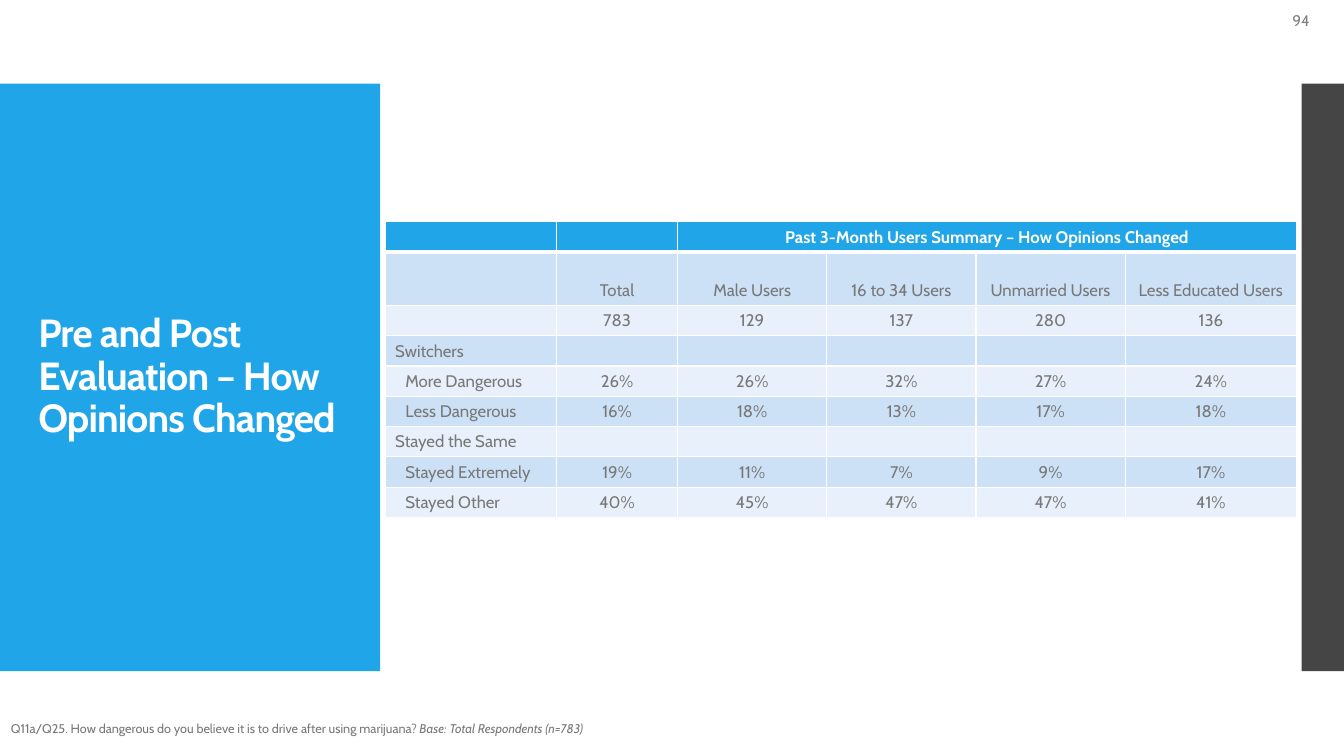
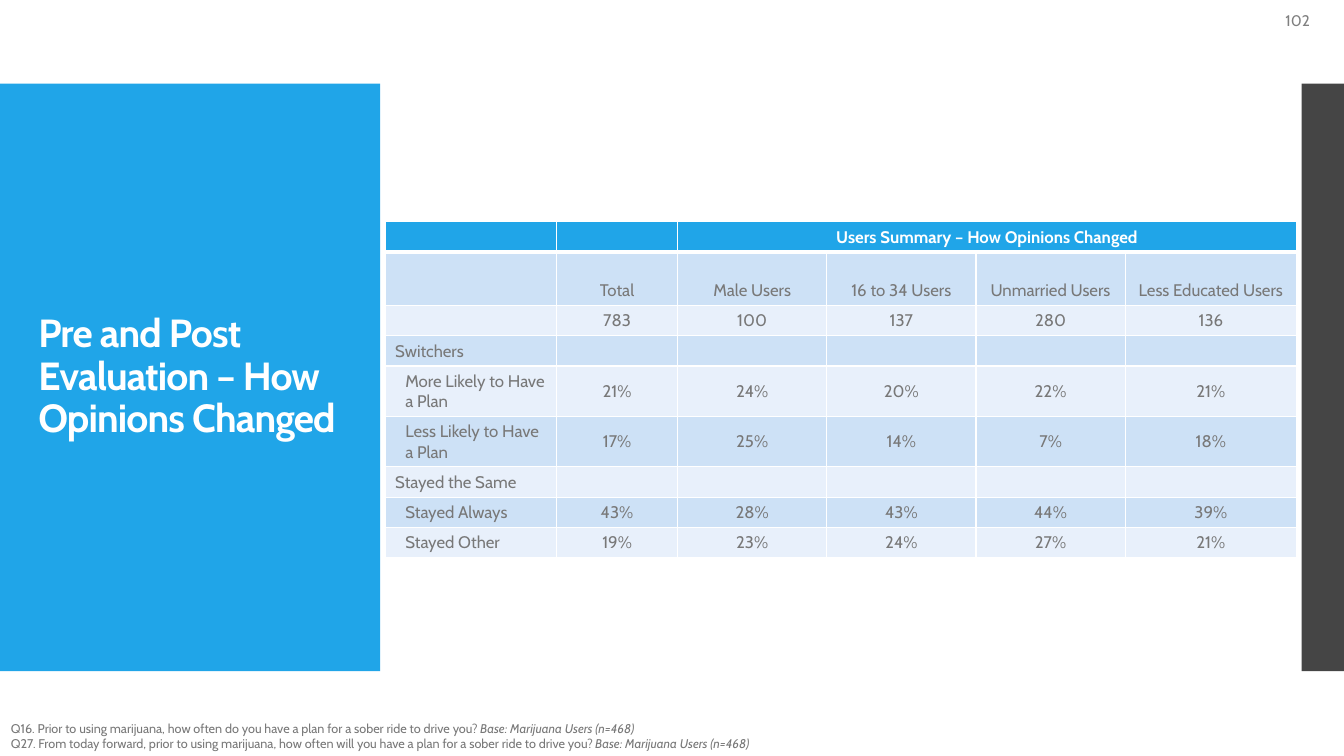
from lxml.etree import SubElement
from pptx import Presentation
from pptx.dml.color import RGBColor
from pptx.enum.shapes import MSO_SHAPE as Preset
from pptx.enum.text import MSO_ANCHOR as Anchor, MSO_AUTO_SIZE as AutoSize, PP_ALIGN as Align
from pptx.oxml.ns import qn
from pptx.util import Inches, Pt

# Content
TITLE = "Pre and Post Evaluation – How Opinions Changed"
GROUPS = ["", "Total", "Male Users", "16 to 34 Users", "Unmarried Users", "Less Educated Users"]
SECTIONS = ("Switchers", "Stayed the Same")
PAGES = [
    {
        "number": "94",
        "heading": "Past 3-Month Users Summary – How Opinions Changed",
        "rows": [
            ["", "783", "129", "137", "280", "136"],
            ["Switchers"],
            ["More Dangerous", "26%", "26%", "32%", "27%", "24%"],
            ["Less Dangerous", "16%", "18%", "13%", "17%", "18%"],
            ["Stayed the Same"],
            ["Stayed Extremely", "19%", "11%", "7%", "9%", "17%"],
            ["Stayed Other", "40%", "45%", "47%", "47%", "41%"],
        ],
        "questions": [
            ("Q11a/Q25. How dangerous do you believe it is to drive after using marijuana? ",
             "Base: Total Respondents (n=783)"),
        ],
    },
    {
        "number": "102",
        "heading": "Users Summary – How Opinions Changed",
        "rows": [
            ["", "783", "100", "137", "280", "136"],
            ["Switchers"],
            ["More Likely to Have a Plan", "21%", "24%", "20%", "22%", "21%"],
            ["Less Likely to Have a Plan", "17%", "25%", "14%", "7%", "18%"],
            ["Stayed the Same"],
            ["Stayed Always", "43%", "28%", "43%", "44%", "39%"],
            ["Stayed Other", "19%", "23%", "24%", "27%", "21%"],
        ],
        "questions": [
            ("Q16. Prior to using marijuana, how often do you have a plan for a sober ride to drive you? ",
             "Base: Marijuana Users (n=468)"),
            ("Q27. From today forward, prior to using marijuana, how often will you have a plan "
             "for a sober ride to drive you? ",
             "Base: Marijuana Users (n=468)"),
        ],
    },
]

# Shared look, lengths in inches
FONT = "Cabin"
COLORS = {"blue": "20A5E8", "charcoal": "454545", "white": "FFFFFF", "text": "787878",
          "number": "808080", "band": "CDE1F6", "pale": "E8F0FB"}
WIDTH, HEIGHT = 13.33, 7.5
BAND_TOP, BAND_HEIGHT = 0.83, 5.83
PANEL_WIDTH, EDGE_WIDTH = 3.77, 0.42
TITLE_BOX = (0.28, 1.23, 3.22, 5.03)
NUMBER_BOX = (12.49, 0.04, 0.6, 0.33)
TABLE_LEFT, TABLE_TOP = 3.82, 2.2
COLUMNS = [1.7, 1.2, 1.48, 1.48, 1.48, 1.7]
HEADING_ROW, GROUP_ROW, LINE_ROW, WRAPPED_ROW = 0.3, 0.53, 0.3, 0.5
LABEL_LIMIT = 20  # longer labels take two lines
INDENT = 0.1


def color(name):
    return RGBColor.from_string(COLORS[name])


def inches(box):
    return [Inches(length) for length in box]


def add_run(paragraph, text, size, tint, bold=False, italic=False):
    run = paragraph.add_run()
    run.text = text
    font = run.font
    font.name, font.size, font.bold, font.italic = FONT, Pt(size), bold, italic
    font.color.rgb = color(tint)
    return run


def prepare_layout(layout, slide):
    """Place the title and the two bands on the layout."""
    title = layout.placeholders[0]
    title.left, title.top, title.width, title.height = inches(TITLE_BOX)
    bands = [(0, PANEL_WIDTH, "blue"), (WIDTH - EDGE_WIDTH, EDGE_WIDTH, "charcoal")]
    for left, width, tint in bands:
        band = slide.shapes.add_shape(Preset.RECTANGLE, *inches((left, BAND_TOP, width, BAND_HEIGHT)))
        band.shadow.inherit = False
        band.fill.solid()
        band.fill.fore_color.rgb = color(tint)
        band.line.fill.background()
        layout.shapes.element.insert(2, band.element)


def add_title(slide):
    frame = slide.shapes.title.text_frame
    frame.auto_size, frame.word_wrap = AutoSize.NONE, True
    frame.vertical_anchor = Anchor.MIDDLE
    paragraph = frame.paragraphs[0]
    paragraph.alignment, paragraph.line_spacing = Align.LEFT, 0.9
    run = add_run(paragraph, TITLE, 28, "white", bold=True)
    run.font._element.set("spc", "-60")


def add_number(slide, number):
    frame = slide.shapes.add_textbox(*inches(NUMBER_BOX)).text_frame
    frame.word_wrap, frame.vertical_anchor = True, Anchor.MIDDLE
    frame.paragraphs[0].alignment = Align.RIGHT
    add_run(frame.paragraphs[0], number, 11, "number")


def add_questions(slide, questions):
    box = (0.01, 7.1, 9.61, 0.1 + 0.15 * len(questions))
    frame = slide.shapes.add_textbox(*inches(box)).text_frame
    frame.word_wrap, frame.auto_size = True, AutoSize.SHAPE_TO_FIT_TEXT
    for index, (question, base) in enumerate(questions):
        paragraph = frame.add_paragraph() if index else frame.paragraphs[0]
        add_run(paragraph, question, 9, "text")
        add_run(paragraph, base, 9, "text", italic=True)


def set_borders(cell, bottom):
    properties = cell._tc.get_or_add_tcPr()
    for side, points in (("L", 1), ("R", 1), ("T", 1), ("B", bottom)):
        line = SubElement(properties, qn(f"a:ln{side}"), w=str(Pt(points)))
        SubElement(SubElement(line, qn("a:solidFill")), qn("a:srgbClr"), val=COLORS["white"])


def fill_cell(cell, text, row, column):
    heading = row == 0
    set_borders(cell, 3 if heading else 1)
    cell.fill.solid()
    cell.fill.fore_color.rgb = color("blue" if heading else "band" if row % 2 else "pale")
    cell.vertical_anchor = Anchor.BOTTOM if row == 1 else Anchor.MIDDLE
    paragraph = cell.text_frame.paragraphs[0]
    paragraph.alignment = Align.CENTER if column else Align.LEFT
    if text:
        add_run(paragraph, text, 12, "white" if heading else "text", bold=heading)
        if column == 0 and text not in SECTIONS:
            paragraph._p.get_or_add_pPr().set("marL", str(Inches(INDENT)))
    else:
        # An empty cell keeps the row as low as its text size
        end = SubElement(paragraph._p, qn("a:endParaRPr"), sz="1200")
        SubElement(end, qn("a:latin"), typeface=FONT)


def add_summary(slide, heading, results):
    rows = [["", "", heading], GROUPS, *results]
    heights = [HEADING_ROW, GROUP_ROW]
    heights += [WRAPPED_ROW if len(label) > LABEL_LIMIT else LINE_ROW for label, *_ in results]
    box = (TABLE_LEFT, TABLE_TOP, sum(COLUMNS), sum(heights))
    table = slide.shapes.add_table(len(rows), len(COLUMNS), *inches(box)).table
    for column, width in zip(table.columns, COLUMNS):
        column.width = Inches(width)
    for row, height in zip(table.rows, heights):
        row.height = Inches(height)
    for r, texts in enumerate(rows):
        padded = texts + [""] * (len(COLUMNS) - len(texts))
        for c, text in enumerate(padded):
            fill_cell(table.cell(r, c), text, r, c)
    table.cell(0, 2).merge(table.cell(0, len(COLUMNS) - 1))


def main():
    deck = Presentation()
    deck.slide_width, deck.slide_height = inches((WIDTH, HEIGHT))
    layout = deck.slide_layouts.get_by_name("Title Only")
    for index, page in enumerate(PAGES):
        slide = deck.slides.add_slide(layout)
        if index == 0:
            prepare_layout(layout, slide)
        add_title(slide)
        add_number(slide, page["number"])
        add_summary(slide, page["heading"], page["rows"])
        add_questions(slide, page["questions"])
    deck.save("out.pptx")


if __name__ == "__main__":
    main()
